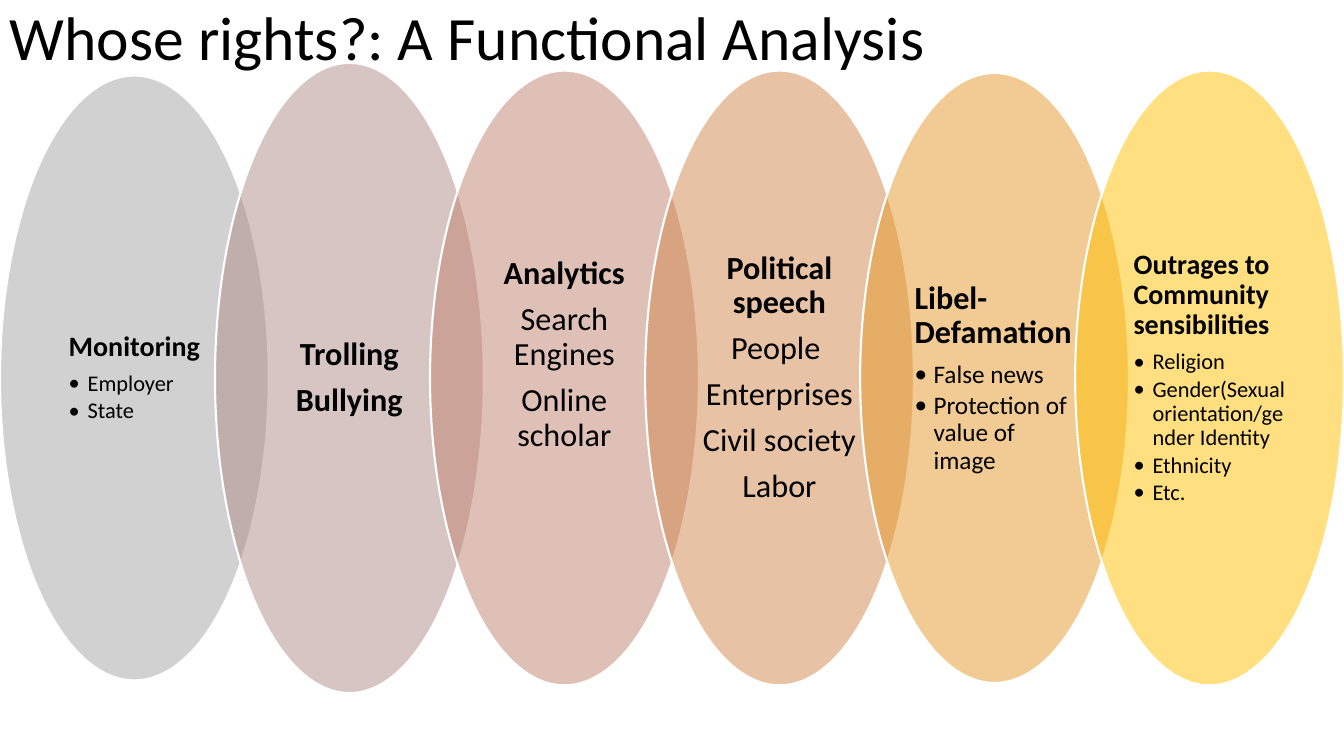
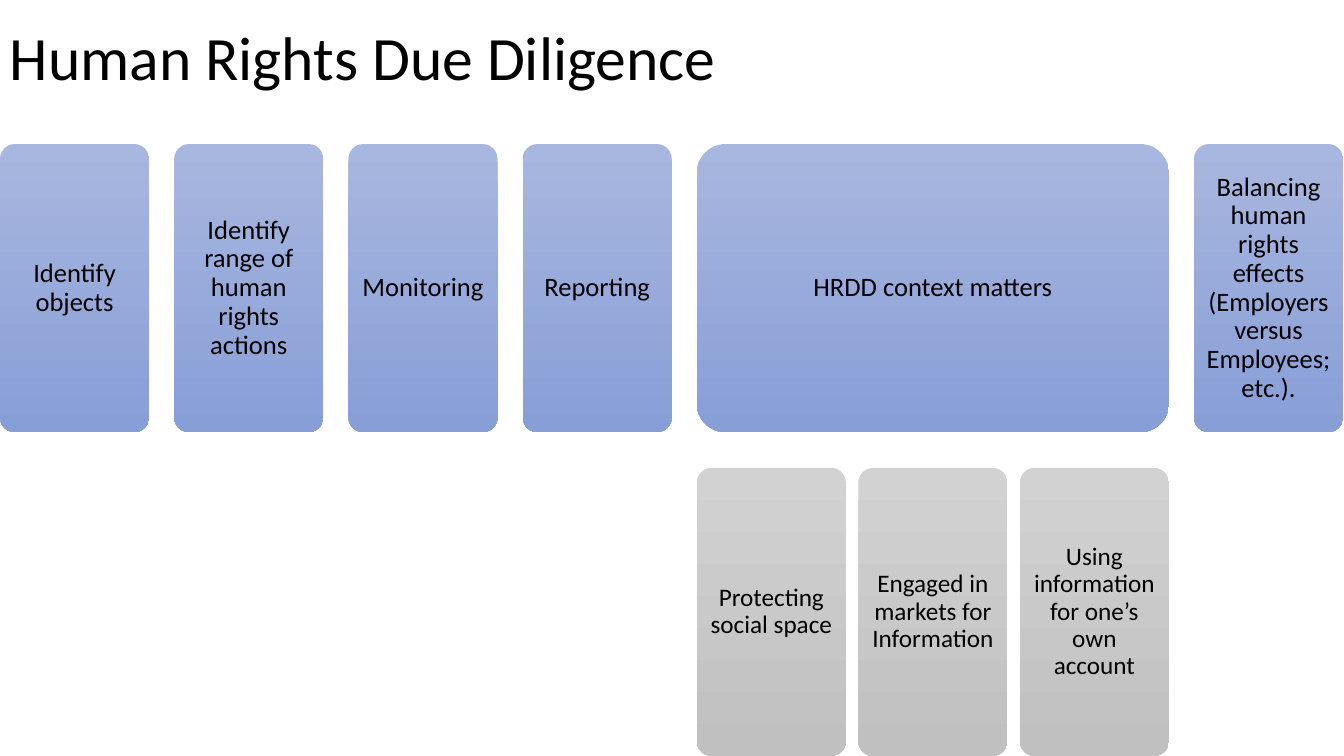
from dataclasses import dataclass

from lxml import etree
from pptx import Presentation
from pptx.dml.color import RGBColor
from pptx.enum.shapes import MSO_SHAPE as Preset
from pptx.enum.text import MSO_ANCHOR as Anchor, PP_ALIGN as Align
from pptx.oxml.ns import qn
from pptx.util import Cm, Pt

# Content: each oval has a heading size, a height and its lines of text
OVALS = [
    dict(color="A5A5A5", height=15.24, size=20, heads=["Monitoring"],
         bullets=["Employer", "State"], bullet_size=16, shift=0.36),
    dict(color="AF8D89", height=15.88, size=23, heads=["Trolling", "Bullying"]),
    dict(color="C18371", height=15.49, size=23, heads=["Analytics"],
         lines=["Search Engines", "Online scholar"], lift=1.16),
    dict(color="D1874B", height=15.49, size=23, heads=["Political speech"],
         lines=["People ", "Enterprises", "Civil society", "Labor"]),
    dict(color="E59929", height=15.37, size=23, heads=["Libel-Defamation"],
         bullets=["False news", "Protection of value of image"], bullet_size=18),
    dict(color="FFC000", height=15.49, size=20,
         heads=["Outrages to Community sensibilities"],
         bullets=["Religion", "Gender(Sexual orientation/gender Identity",
                  "Ethnicity", "Etc."], bullet_size=16, shift=0.1),
]
# Each step is its text and the cards below it
STEPS = [
    ("Identify objects", []),
    ("Identify range of human rights actions", []),
    ("Monitoring", []),
    ("Reporting", []),
    ("HRDD context matters", [
        "Protecting social space",
        "Engaged in markets for Information",
        "Using information for one’s own account",
    ]),
    ("Balancing human rights effects (Employers versus Employees; etc.).", []),
]


@dataclass(frozen=True)
class Theme:
    font: str = "Calibri"
    text: str = "000000"
    rim: str = "FFFFFF"
    step: tuple = ("A8B7DF", "889ED7")
    detail: tuple = ("D2D2D2", "C0C0C0")
    title_size: int = 44
    step_size: int = 19
    detail_size: int = 18
    line_spacing: float = 0.9


THEME = Theme()
SLIDE_WIDTH, SLIDE_HEIGHT = 33.87, 19.05


# Shared helpers
def style(paragraph, size, bold=False, align=Align.LEFT, after=0.35):
    paragraph.alignment = align
    paragraph.line_spacing = THEME.line_spacing
    paragraph.space_after = Pt(round(size * after, 1))
    for run in paragraph.runs:
        run.font.name = THEME.font
        run.font.size = Pt(size)
        run.font.bold = bold
        run.font.color.rgb = RGBColor.from_string(THEME.text)


def add_bullet(paragraph):
    properties = paragraph._p.get_or_add_pPr()
    properties.set("marL", str(Cm(0.48)))
    properties.set("indent", str(-Cm(0.48)))
    etree.SubElement(properties, qn("a:buFont")).set("typeface", THEME.font)
    etree.SubElement(properties, qn("a:buChar")).set("char", "•")


def set_margins(frame, left, top, right, bottom):
    frame.margin_left, frame.margin_top = Cm(left), Cm(top)
    frame.margin_right, frame.margin_bottom = Cm(right), Cm(bottom)
    frame.word_wrap = True
    frame.vertical_anchor = Anchor.MIDDLE


def add_shape(slide, preset, left, top, width, height):
    shape = slide.shapes.add_shape(preset, Cm(left), Cm(top), Cm(width), Cm(height))
    shape.shadow.inherit = False
    return shape


def add_title(slide, text, width, height):
    frame = slide.shapes.add_textbox(0, 0, Cm(width), Cm(height)).text_frame
    set_margins(frame, 0.25, 0.13, 0.25, 0.13)
    frame.text = text
    style(frame.paragraphs[0], THEME.title_size, after=0)


# Row of overlapping ovals
def add_oval(slide, left, width, oval):
    height = oval["height"]
    shape = add_shape(slide, Preset.OVAL, left, (SLIDE_HEIGHT - height) / 2, width, height)
    shape.fill.solid()
    shape.fill.fore_color.rgb = RGBColor.from_string(oval["color"])
    color = shape._element.spPr.find(qn("a:solidFill"))[0]
    etree.SubElement(color, qn("a:alpha")).set("val", "50000")
    shape.line.color.rgb = RGBColor.from_string(THEME.rim)
    shape.line.width = Pt(1.5)

    frame = shape.text_frame
    set_margins(frame, 0.38 + oval.get("shift", 0), 0.08, 0.38, 0.08 + oval.get("lift", 0))
    heads, lines, bullets = (oval.get(key, []) for key in ("heads", "lines", "bullets"))
    frame.text = "\n".join(heads + lines + bullets)
    plain_from, bullets_from = len(heads), len(heads) + len(lines)
    for index, paragraph in enumerate(frame.paragraphs):
        if index >= bullets_from:
            add_bullet(paragraph)
            style(paragraph, oval["bullet_size"], after=0.15)
        else:
            style(paragraph, oval["size"], bold=index < plain_from,
                  align=Align.LEFT if bullets else Align.CENTER)


def build_rights(slide):
    add_title(slide, "Whose rights?: A Functional Analysis", 24.51, 2.06)
    width = SLIDE_WIDTH / 5
    for index, oval in enumerate(OVALS):
        add_oval(slide, index * width * 0.8, width, oval)


# Row of steps with detail cards below
def add_card(slide, left, top, width, height, text, colors, size, margin):
    shape = add_shape(slide, Preset.ROUNDED_RECTANGLE, left, top, width, height)
    shape.adjustments[0] = 0.1
    shape.fill.gradient()
    shape.fill.gradient_angle = 270
    for stop, color in zip(shape.fill.gradient_stops, colors):
        stop.color.rgb = RGBColor.from_string(color)
    shape.line.fill.background()
    set_margins(shape.text_frame, margin, margin, margin, margin)
    shape.text_frame.text = text
    style(shape.text_frame.paragraphs[0], size, align=Align.CENTER)


def build_diligence(slide):
    add_title(slide, "Human Rights Due Diligence", 19.3, 3.05)
    width, height, gap, detail_gap = 3.76, 7.26, 0.63, 0.31
    top, detail_top = 3.63, SLIDE_HEIGHT - height
    left = 0
    for text, details in STEPS:
        count = max(len(details), 1)
        step_width = count * width + (count - 1) * detail_gap
        add_card(slide, left, top, step_width, height, text,
                 THEME.step, THEME.step_size, 0.2)
        for index, detail in enumerate(details):
            add_card(slide, left + index * (width + detail_gap), detail_top, width, height,
                     detail, THEME.detail, THEME.detail_size, 0.18)
        left += step_width + gap


def main():
    presentation = Presentation()
    presentation.slide_width, presentation.slide_height = Cm(SLIDE_WIDTH), Cm(SLIDE_HEIGHT)
    for build in (build_rights, build_diligence):
        build(presentation.slides.add_slide(presentation.slide_layouts[6]))
    presentation.save("out.pptx")


if __name__ == "__main__":
    main()
